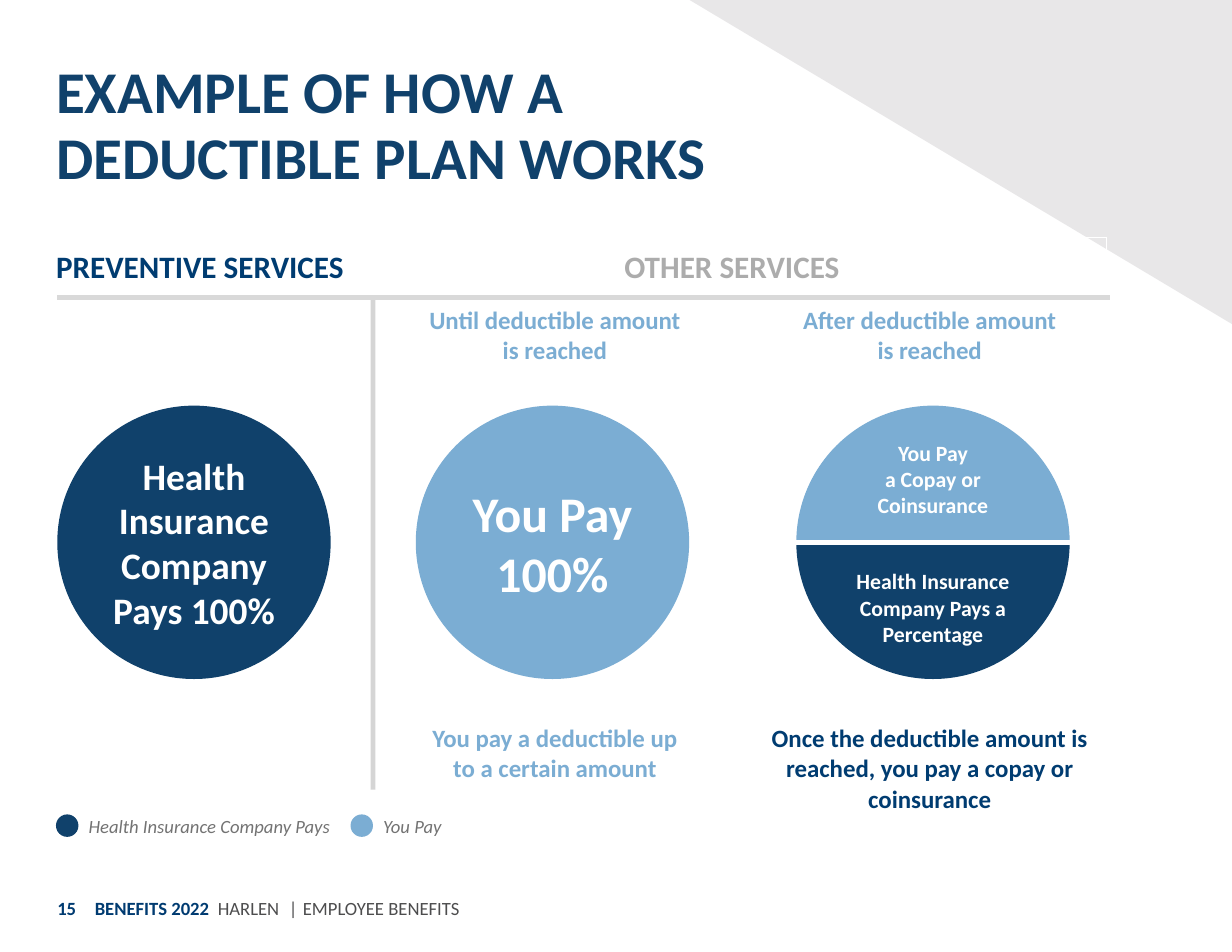
from lxml import etree
from pptx import Presentation
from pptx import util as u
from pptx.dml import color
from pptx.enum import shapes, text
from pptx.oxml import ns

NAVY, SKY, INK, WHITE = "10416B", "7BADD3", "003C71", "FFFFFF"
LEFT, MIDDLE = 1.27, text.MSO_ANCHOR.MIDDLE
CENTER = text.PP_ALIGN.CENTER
SHAPE = shapes.MSO_SHAPE


def rgb(hex_string):
    return color.RGBColor.from_string(hex_string)


def place(box):
    return [u.Cm(length) for length in box]


def format_span(span, size, hex_string, **styles):
    formats = {"name": "Calibri", "size": u.Pt(size), "bold": True, **styles}
    for name, value in formats.items():
        setattr(span.font, name, value)
    span.font.color.rgb = rgb(hex_string)


def write(frame, lines, size, hex_string, align=None, **styles):
    """Fill a text frame with one paragraph for each line."""
    frame.word_wrap = True
    for index, line in enumerate(lines):
        para = frame.add_paragraph() if index else frame.paragraphs[0]
        para.alignment = align
        para.text = line
        for span in para.runs:
            format_span(span, size, hex_string, **styles)


def set_margins(holder, left=0, top=0, right=0, bottom=0):
    for side, value in dict(left=left, top=top, right=right, bottom=bottom).items():
        setattr(holder, f"margin_{side}", u.Cm(value))


def add_text(page, box, *args, margins=None, anchor=None, **styles):
    frame = page.shapes.add_textbox(*place(box)).text_frame
    if margins is not None:
        set_margins(frame, **margins)
    frame.vertical_anchor = anchor
    write(frame, *args, **styles)
    return frame


def add_filled(page, kind, box, hex_string):
    shape = page.shapes.add_shape(kind, *place(box))
    shape.shadow.inherit = False
    shape.fill.solid()
    shape.fill.fore_color.rgb = rgb(hex_string)
    shape.line.fill.background()
    return shape


def add_rule(page, start, end, hex_string, alpha=None):
    rule = page.shapes.add_connector(shapes.MSO_CONNECTOR.STRAIGHT, *place(start + end))
    rule.line.width = u.Pt(3)
    rule.line.color.rgb = rgb(hex_string)
    properties = rule._element.spPr
    if alpha:
        tint = properties.find(".//" + ns.qn("a:srgbClr"))
        etree.SubElement(tint, ns.qn("a:alpha"), val=str(alpha * 1000))
    etree.SubElement(properties, ns.qn("a:effectLst"))


def add_title(page, box):
    title = page.shapes.title
    title.left, title.top, title.width, title.height = place(box)
    frame = title.text_frame
    set_margins(frame)
    frame.auto_size = text.MSO_AUTO_SIZE.NONE
    frame.vertical_anchor = text.MSO_ANCHOR.TOP
    write(frame, ["EXAMPLE OF HOW A DEDUCTIBLE PLAN WORKS"], 38, NAVY, text.PP_ALIGN.LEFT)
    frame.paragraphs[0].line_spacing = u.Pt(42)


def add_split_circle(page, box):
    left, top, width, height = box
    middle = top + height / 2
    # Pie angles: 108 is a half turn
    for angles, fill in (((0, 108), NAVY), ((108, 0), SKY)):
        half = add_filled(page, SHAPE.PIE, box, fill)
        half.adjustments[0], half.adjustments[1] = angles
    add_rule(page, (left, middle), (left + width, middle), WHITE)
    add_text(page, (left + 1.37, top + 0.64, 3.46, 2.06),
             ["You Pay", "a Copay or Coinsurance"], 14, WHITE, CENTER)
    add_text(page, (left + 0.99, top + 3.56, 4.22, 2.06),
             ["Health Insurance Company Pays a Percentage"], 14, WHITE, CENTER)


def add_circle(page, box, lines, size, fill):
    circle = add_filled(page, SHAPE.OVAL, box, fill)
    circle.text_frame.vertical_anchor = MIDDLE
    write(circle.text_frame, lines, size, WHITE, CENTER)


def add_service_table(page, box):
    columns, rows = (6.83, 8.97, 8.03), (1.4, 1.24, 7.8, 2.31)
    table = page.shapes.add_table(len(rows), len(columns), *place(box)).table
    table.first_row = table.horz_banding = False
    for column, width in zip(table.columns, columns):
        column.width = u.Cm(width)
    for row, height in zip(table.rows, rows):
        row.height = u.Cm(height)
    for cell in table.iter_cells():
        cell.fill.background()
        set_margins(cell, 0.28, 0.15, 0.28, 0.15)
    table.cell(0, 1).merge(table.cell(0, 2))

    entries = {
        (0, 0): ("PREVENTIVE SERVICES", 20, INK, None),
        (0, 1): ("OTHER SERVICES", 20, "ACACAC", CENTER),
        (1, 1): ("Until deductible amount\vis reached", 16, SKY, CENTER),
        (1, 2): ("After deductible amount\vis reached", 16, SKY, CENTER),
        (3, 1): ("You pay a deductible up\vto a certain amount", 16, SKY, CENTER),
        (3, 2): ("Once the deductible amount is reached, you pay a copay or coinsurance",
                 16, INK, CENTER),
    }
    for (row, column), (words, *style) in entries.items():
        cell = table.cell(row, column)
        write(cell.text_frame, [words], *style)
        if row == 0:
            cell.vertical_anchor = MIDDLE
    table.cell(0, 0).margin_left = 0


def add_legend(page, box):
    left, top, step, dot = box
    entries = (("Health Insurance Company Pays", NAVY), ("You Pay", SKY))
    for index, (label, fill) in enumerate(entries):
        x = left + index * step
        add_filled(page, SHAPE.OVAL, (x, top, dot, dot), fill)
        add_text(page, (x + 0.74, top, 5.8, dot), [label], 12, "737373",
                 margins={}, bold=False, italic=True)


def add_footer(page, box):
    left, top, width, height = box
    margins = {"top": 0.13, "bottom": 0.13}
    add_text(page, (left, top, 0.8, height), ["15"], 12, "003B71",
             margins=margins, anchor=MIDDLE)
    frame = add_text(page, (left + 0.85, top, width - 0.85, height), ["BENEFITS 2022"],
                     12, "003B71", margins=margins, anchor=MIDDLE)
    para = frame.paragraphs[0]
    tabs = etree.SubElement(para._p.get_or_add_pPr(), ns.qn("a:tabLst"))
    for stop in (2.79, 4.4, 4.72):
        etree.SubElement(tabs, ns.qn("a:tab"), pos=str(u.Cm(stop)), algn="l")
    span = para.add_run()
    span.text = "\tHARLEN\t|\tEMPLOYEE BENEFITS"
    format_span(span, 12, "4D4D4E", bold=False)


def main():
    deck = Presentation()
    deck.slide_width, deck.slide_height = u.Cm(27.94), u.Cm(21.59)
    page = deck.slides.add_slide(deck.slide_layouts[5])

    # Corner and heading
    corner = add_filled(page, SHAPE.RIGHT_TRIANGLE, (15.64, 0, 12.3, 7.35), "E8E7E8")
    corner.rotation = 180
    add_title(page, (LEFT, 1.37, 15.62, 3))

    # Services and their dividers
    add_service_table(page, (LEFT, 5.38, 23.83, 12.75))
    add_rule(page, (8.46, 6.74), (8.46, 17.91), "ACACAC", alpha=50)
    add_rule(page, (1.3, 6.74), (25.17, 6.74), "D9D9D9")

    # Who pays
    top, size = 9.2, 6.2
    add_circle(page, (1.3, top, size, size), ["Health Insurance Company Pays 100%"], 24, NAVY)
    add_circle(page, (9.43, top, size, size), ["You Pay", "100%"], 32, SKY)
    add_split_circle(page, (18.06, top, size, size))

    # Legend and footer
    add_legend(page, (LEFT, 18.47, 6.68, 0.51))
    add_footer(page, (1.3, 20.02, 12, 1.14))
    deck.save("out.pptx")


if __name__ == "__main__":
    main()
